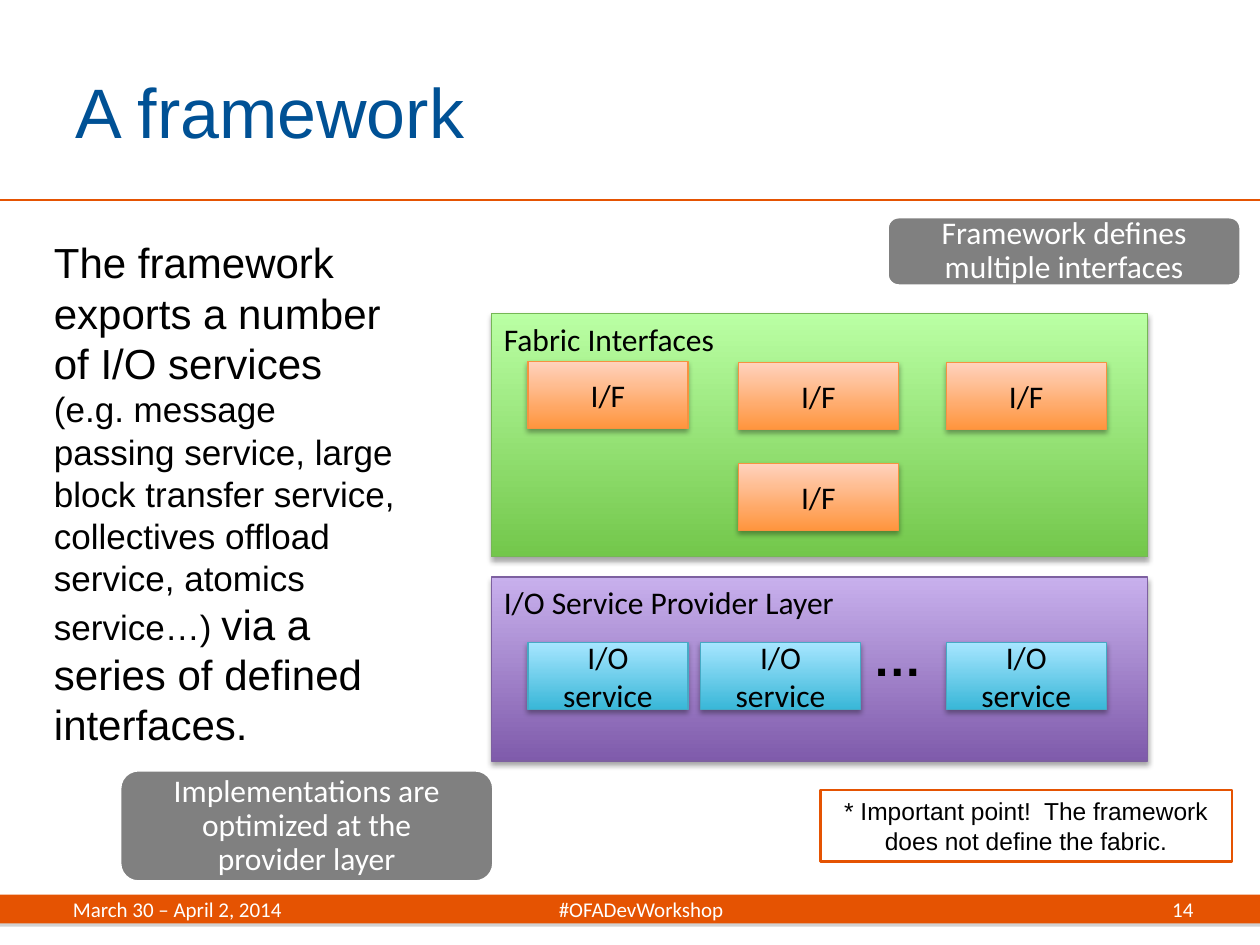
from dataclasses import dataclass

from lxml import etree
from pptx import Presentation, util as u
from pptx.dml.color import RGBColor
from pptx.enum import shapes, text
from pptx.oxml import ns

COLUMNS, ROWS = 100, 75
CELL = u.Inches(0.1)
COLORS = {
    "orange": "E55302", "title": "005195", "black": "000000", "white": "FFFFFF",
    "callout": "808080",
}
GRADIENTS = {
    "green": ("73C74B", "BAFFA4", "75B755"),
    "peach": ("FF953E", "FFD2BD", "F69240"),
    "purple": ("7F5BAB", "C8B0ED", "7D60A0"),
    "cyan": ("39B7D8", "A7E6FF", "46AAC5"),
}
ALIGN = text.PP_ALIGN
ANCHOR = text.MSO_ANCHOR
PRESET = shapes.MSO_SHAPE


@dataclass
class Box:
    """A rectangle in grid columns and rows."""
    left: float
    top: float
    width: float
    height: float

    def inside(self, left, top, width, height):
        """Return a box placed from this box's corner."""
        return Box(self.left + left, self.top + top, width, height)

    def lengths(self):
        """Return the rectangle in slide units."""
        return [round(value * CELL) for value in (self.left, self.top, self.width, self.height)]


def rgb(value):
    """Turn a hex string into a colour."""
    return RGBColor.from_string(value)


def format_run(run, size, color="black", font="Calibri", bold=False):
    """Set the font of a run."""
    run.font.name, run.font.size, run.font.bold = font, u.Pt(size), bold
    run.font.color.rgb = rgb(COLORS[color])


def write(shape, words, size, color="black", font="Calibri",
          align=ALIGN.LEFT, anchor=ANCHOR.TOP, bold=False):
    """Write one formatted paragraph and return it."""
    frame = shape.text_frame
    frame.word_wrap = True
    frame.vertical_anchor = anchor
    paragraph = frame.paragraphs[0]
    paragraph.text = words
    paragraph.alignment = align
    format_run(paragraph.runs[0], size, color, font, bold)
    return paragraph


def add_shadow(shape, color, opacity, blur):
    """Give a shape a soft shadow straight below it."""
    shape.shadow.inherit = False
    effects = shape._element.spPr.find(ns.qn("a:effectLst"))
    shadow = etree.SubElement(
        effects, ns.qn("a:outerShdw"), blurRad=str(u.Pt(blur)), dist=str(u.Pt(1.8)),
        dir="5400000", rotWithShape="0")
    tint = etree.SubElement(shadow, ns.qn("a:srgbClr"), val=color)
    etree.SubElement(tint, ns.qn("a:alpha"), val=str(opacity * 1000))


def add_block(slide, box, style, words, **options):
    """Add a gradient rectangle with a label."""
    shape = slide.shapes.add_shape(PRESET.RECTANGLE, *box.lengths())
    bottom, top, edge = GRADIENTS[style]
    shape.fill.gradient()
    shape.fill.gradient_angle = 90
    for stop, color in zip(shape.fill.gradient_stops, (bottom, top)):
        stop.color.rgb = rgb(color)
    shape.line.color.rgb = rgb(edge)
    shape.line.width = u.Pt(0.75)
    add_shadow(shape, COLORS["black"], 35, 3.1)
    write(shape, words, 18, **options)


def add_layer(slide, box, style, title, part_style, part_words, places):
    """Add a titled layer holding equal parts at the given places."""
    add_block(slide, box, style, title)
    for left, top in places:
        add_block(slide, box.inside(left, top, 12.7, 5.3), part_style, part_words,
                  align=ALIGN.CENTER, anchor=ANCHOR.MIDDLE)


def add_callout(slide, box, words):
    """Add a grey rounded callout."""
    shape = slide.shapes.add_shape(PRESET.ROUNDED_RECTANGLE, *box.lengths())
    shape.shadow.inherit = False
    shape.fill.solid()
    shape.fill.fore_color.rgb = rgb(COLORS["callout"])
    shape.line.color.rgb = rgb(COLORS["white"])
    shape.line.width = u.Pt(2)
    frame = shape.text_frame
    frame.margin_left = frame.margin_right = u.Inches(0.16)
    frame.margin_top = frame.margin_bottom = u.Inches(0.16)
    paragraph = write(shape, words, 18, "white", align=ALIGN.CENTER, anchor=ANCHOR.MIDDLE)
    paragraph.line_spacing = 0.9


def add_header(slide, box):
    """Place the title and the rule below it."""
    title = slide.shapes.title
    title.left, title.top, title.width, title.height = box.inside(5, 2.5, 81.7, 12.5).lengths()
    write(title, "A framework", 40, "title", "Arial", anchor=ANCHOR.MIDDLE)
    left, top, width, height = box.lengths()
    rule = slide.shapes.add_connector(
        shapes.MSO_CONNECTOR.STRAIGHT, left, top + height, left + width, top + height)
    rule.line.color.rgb = rgb(COLORS["orange"])
    rule.line.width = u.Pt(1)
    etree.SubElement(rule._element.spPr, ns.qn("a:effectLst"))


def add_summary(slide, box):
    """Add the running text at the left."""
    shape = slide.shapes.add_textbox(*box.lengths())
    paragraph = write(shape, "The framework exports a number of I/O services ", 24, font="Arial")
    for words, size in (
        ("(e.g. message passing service, large block transfer service, "
         "collectives offload service, atomics service…) ", 20),
        ("via a series of defined interfaces.", 24),
    ):
        run = paragraph.add_run()
        run.text = words
        format_run(run, size, font="Arial")


def add_diagram(slide, box):
    """Add the two layers of the framework."""
    first, middle, last = 2.9, 19.6, 36.1
    add_layer(slide, box.inside(0, 0, box.width, 19.3), "green", "Fabric Interfaces",
              "peach", "I/F", [(first, 3.8), (middle, 3.9), (last, 3.9), (middle, 11.9)])
    add_layer(slide, box.inside(0, 20.9, box.width, 14.6), "purple",
              "I/O Service Provider Layer", "cyan", "I/O service",
              [(left, 5.2) for left in (first, 16.6, last)])
    dots = slide.shapes.add_textbox(*box.inside(29.3, 24.4, 5.9, 5.7).lengths())
    write(dots, "…", 28, font="Arial", bold=True)
    dots.text_frame.word_wrap = False


def add_note(slide, box):
    """Add the outlined remark."""
    shape = slide.shapes.add_shape(PRESET.RECTANGLE, *box.lengths())
    shape.shadow.inherit = False
    shape.fill.background()
    shape.line.color.rgb = rgb(COLORS["orange"])
    shape.line.width = u.Pt(1.5)
    write(shape, "* Important point!  The framework does not define the fabric.", 14,
          font="Arial", align=ALIGN.CENTER)


def add_footer(slide, box):
    """Add the footer bar with date, hashtag and page number."""
    bar = slide.shapes.add_shape(PRESET.RECTANGLE, *box.lengths())
    bar.fill.solid()
    bar.fill.fore_color.rgb = rgb(COLORS["orange"])
    bar.line.fill.background()
    add_shadow(bar, COLORS["callout"], 35, 0)
    number = slide.shapes.add_textbox(*box.inside(83.8, 0, 11.9, box.height).lengths())
    write(number, "14", 12, "white", align=ALIGN.RIGHT, anchor=ANCHOR.MIDDLE)
    label = slide.shapes.add_textbox(*box.inside(4.8, 0, 90.5, box.height).lengths())
    properties = label.text_frame.paragraphs[0]._p.get_or_add_pPr()
    tabs = etree.SubElement(properties, ns.qn("a:tabLst"))
    etree.SubElement(tabs, ns.qn("a:tab"), pos=str(u.Inches(4.51)), algn="ctr")
    write(label, "March 30 – April 2, 2014\t#OFADevWorkshop", 12, "white", anchor=ANCHOR.MIDDLE)


def main():
    """Build and save the slide."""
    presentation = Presentation()
    presentation.slide_width, presentation.slide_height = COLUMNS * CELL, ROWS * CELL
    slide = presentation.slides.add_slide(presentation.slide_layouts[5])
    add_footer(slide, Box(0, 71, COLUMNS, 2.3))
    add_header(slide, Box(0, 0, COLUMNS, 15.85))
    add_diagram(slide, Box(39, 24.9, 52.1, 35.5))
    add_callout(slide, Box(70.4, 17.2, 28.1, 5.5), "Framework defines multiple interfaces")
    add_callout(slide, Box(9.5, 61.1, 29.7, 8.9),
                "Implementations are optimized at the provider layer")
    add_summary(slide, Box(3.3, 18.3, 29.6, 42.1))
    add_note(slide, Box(65.1, 62.7, 32.7, 5.7))
    presentation.save("out.pptx")


if __name__ == "__main__":
    main()
